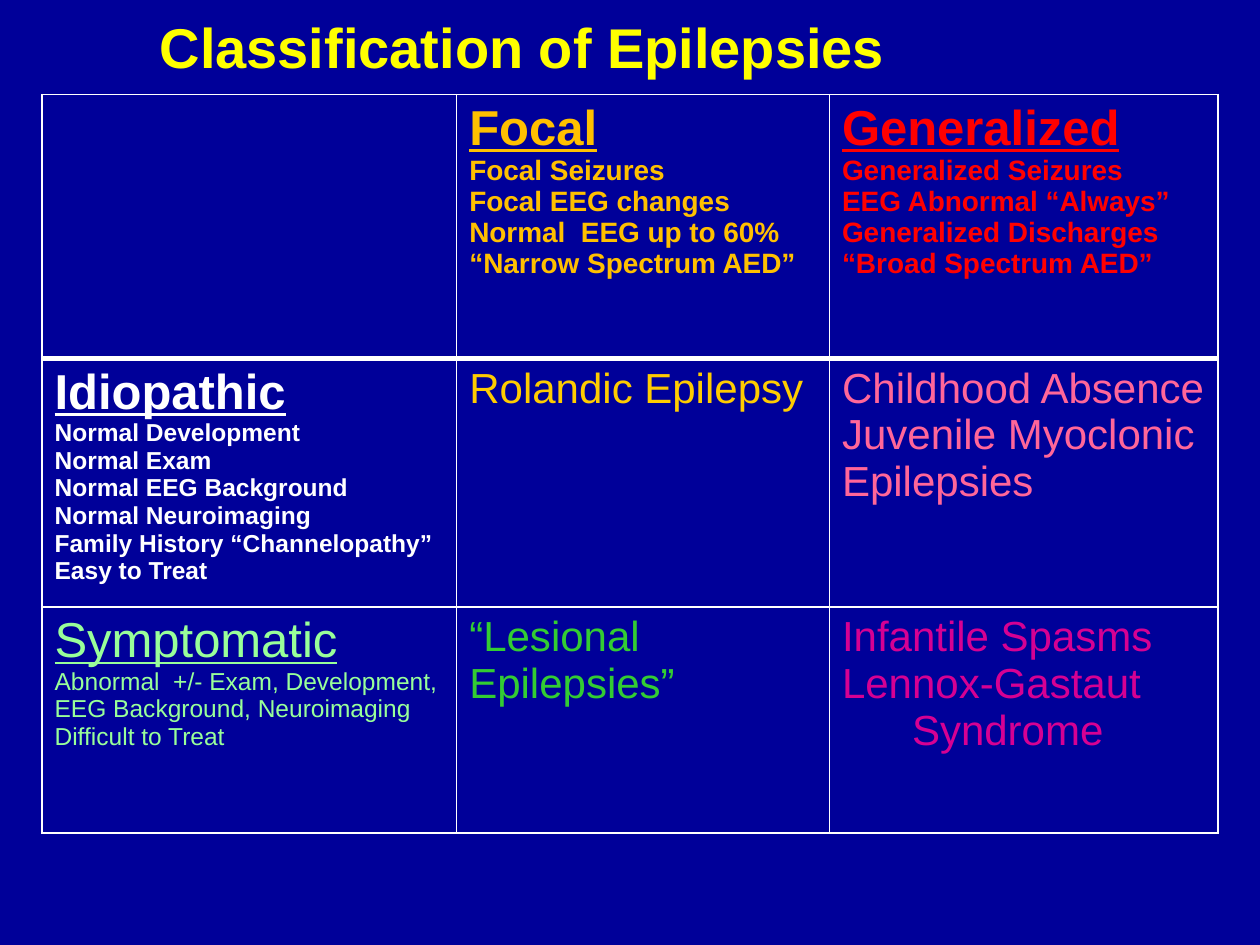
from lxml import etree
from pptx import Presentation
from pptx.dml.color import RGBColor
from pptx.enum.text import MSO_ANCHOR, MSO_AUTO_SIZE, PP_ALIGN
from pptx.oxml.ns import qn
from pptx.util import Pt

TOP = MSO_ANCHOR.TOP
NO_AUTOFIT = MSO_AUTO_SIZE.NONE
LEFT = PP_ALIGN.LEFT

NAVY = RGBColor(0x00, 0x00, 0x99)
WHITE = RGBColor(0xFF, 0xFF, 0xFF)
YELLOW = RGBColor(0xFF, 0xFF, 0x00)
AMBER = RGBColor(0xFF, 0xC0, 0x00)
GOLD = RGBColor(0xFF, 0xCC, 0x00)
RED = RGBColor(0xFF, 0x00, 0x00)
PINK = RGBColor(0xFF, 0x66, 0x99)
MINT = RGBColor(0x99, 0xFF, 0x99)
GREEN = RGBColor(0x33, 0xCC, 0x33)
MAGENTA = RGBColor(0xD6, 0x00, 0x93)

FONT = "Arial"
COLUMN_WIDTHS = (237, 213, 222)
ROW_HEIGHTS = (151, 142, 129)
EXAMPLE_SIZE = 24
HEADING_SIZE = 28
SYNDROME_INDENT = 40


def set_attributes(target, values):
    """Set each named attribute of the target."""
    for name, value in values.items():
        setattr(target, name, value)


def add_line(paragraph, text, size, color, bold=False, underline=False):
    """Write one formatted run into a paragraph."""
    run = paragraph.add_run()
    run.text = text
    set_attributes(run.font, {"name": FONT, "size": Pt(size), "bold": bold, "underline": underline})
    run.font.color.rgb = color


def next_paragraph(text_frame):
    """Return the first paragraph if unused, otherwise a new one."""
    first = text_frame.paragraphs[0]
    return text_frame.add_paragraph() if first.runs else first


def fill_heading(cell, heading, details, size, color, bold=True):
    """Write an underlined heading followed by its features."""
    add_line(next_paragraph(cell.text_frame), heading, HEADING_SIZE, color, bold, True)
    for detail in details:
        add_line(next_paragraph(cell.text_frame), detail, size, color, bold)


def fill_examples(cell, lines, color):
    """Write the example epilepsies of one class."""
    for line in lines:
        add_line(next_paragraph(cell.text_frame), line, EXAMPLE_SIZE, color)


def add_border(cell, side, width):
    """Add a solid white border to one side of a cell."""
    properties = cell._tc.get_or_add_tcPr()
    line = etree.SubElement(properties, qn(f"a:ln{side}"), w=str(Pt(width)))
    fill = etree.SubElement(line, qn("a:solidFill"))
    etree.SubElement(fill, qn("a:srgbClr"), val=str(WHITE))


def add_title(slide, text):
    """Place and format the slide title."""
    title = slide.shapes.title
    set_attributes(title, {"left": Pt(84), "top": Pt(0), "width": Pt(504), "height": Pt(85)})
    set_attributes(title.text_frame, {
        "vertical_anchor": TOP, "auto_size": NO_AUTOFIT, "word_wrap": True, "margin_top": Pt(7)})
    paragraph = title.text_frame.paragraphs[0]
    paragraph.alignment = LEFT
    add_line(paragraph, text, 32, YELLOW, bold=True)


def add_grid(slide):
    """Add the bordered navy table and return it."""
    frame = slide.shapes.add_table(
        len(ROW_HEIGHTS), len(COLUMN_WIDTHS), Pt(24), Pt(54),
        Pt(sum(COLUMN_WIDTHS)), Pt(sum(ROW_HEIGHTS)))
    table = frame.table
    set_attributes(table, {"first_row": False, "horz_banding": False})
    for column, width in zip(table.columns, COLUMN_WIDTHS):
        column.width = Pt(width)
    for row_index, height in enumerate(ROW_HEIGHTS):
        row = table.rows[row_index]
        row.height = Pt(height)
        widths = {"L": 1, "R": 1, "T": 3 if row_index == 1 else 1, "B": 3 if row_index == 0 else 1}
        for cell in row.cells:
            for side, width in widths.items():
                add_border(cell, side, width)
            cell.fill.solid()
            cell.fill.fore_color.rgb = NAVY
    return table


def main():
    """Build the epilepsy classification slide."""
    presentation = Presentation()
    set_attributes(presentation, {"slide_width": Pt(720), "slide_height": Pt(540)})
    slide = presentation.slides.add_slide(presentation.slide_layouts[5])
    slide.background.fill.solid()
    slide.background.fill.fore_color.rgb = NAVY
    add_title(slide, "Classification of Epilepsies")

    table = add_grid(slide)
    fill_heading(table.cell(0, 1), "Focal", (
        "Focal Seizures", "Focal EEG changes", "Normal  EEG up to 60%",
        "“Narrow Spectrum AED”"), 16, AMBER)
    fill_heading(table.cell(0, 2), "Generalized", (
        "Generalized Seizures", "EEG Abnormal “Always”", "Generalized Discharges",
        "“Broad Spectrum AED”"), 16, RED)
    fill_heading(table.cell(1, 0), "Idiopathic", (
        "Normal Development", "Normal Exam", "Normal EEG Background", "Normal Neuroimaging",
        "Family History “Channelopathy”", "Easy to Treat"), 14, WHITE)
    fill_heading(table.cell(2, 0), "Symptomatic", (
        "Abnormal  +/- Exam, Development, EEG Background, Neuroimaging",
        "Difficult to Treat"), 14, MINT, bold=False)

    fill_examples(table.cell(1, 1), ("Rolandic Epilepsy",), GOLD)
    fill_examples(table.cell(1, 2), ("Childhood Absence", "Juvenile Myoclonic", "Epilepsies"), PINK)
    fill_examples(table.cell(2, 1), ("“Lesional", "Epilepsies”"), GREEN)
    generalized_symptomatic = table.cell(2, 2)
    fill_examples(generalized_symptomatic, ("Infantile Spasms", "Lennox-Gastaut", "Syndrome"), MAGENTA)
    syndrome = generalized_symptomatic.text_frame.paragraphs[-1]
    syndrome._p.get_or_add_pPr().set("marL", str(Pt(SYNDROME_INDENT)))

    presentation.save("out.pptx")


if __name__ == "__main__":
    main()
